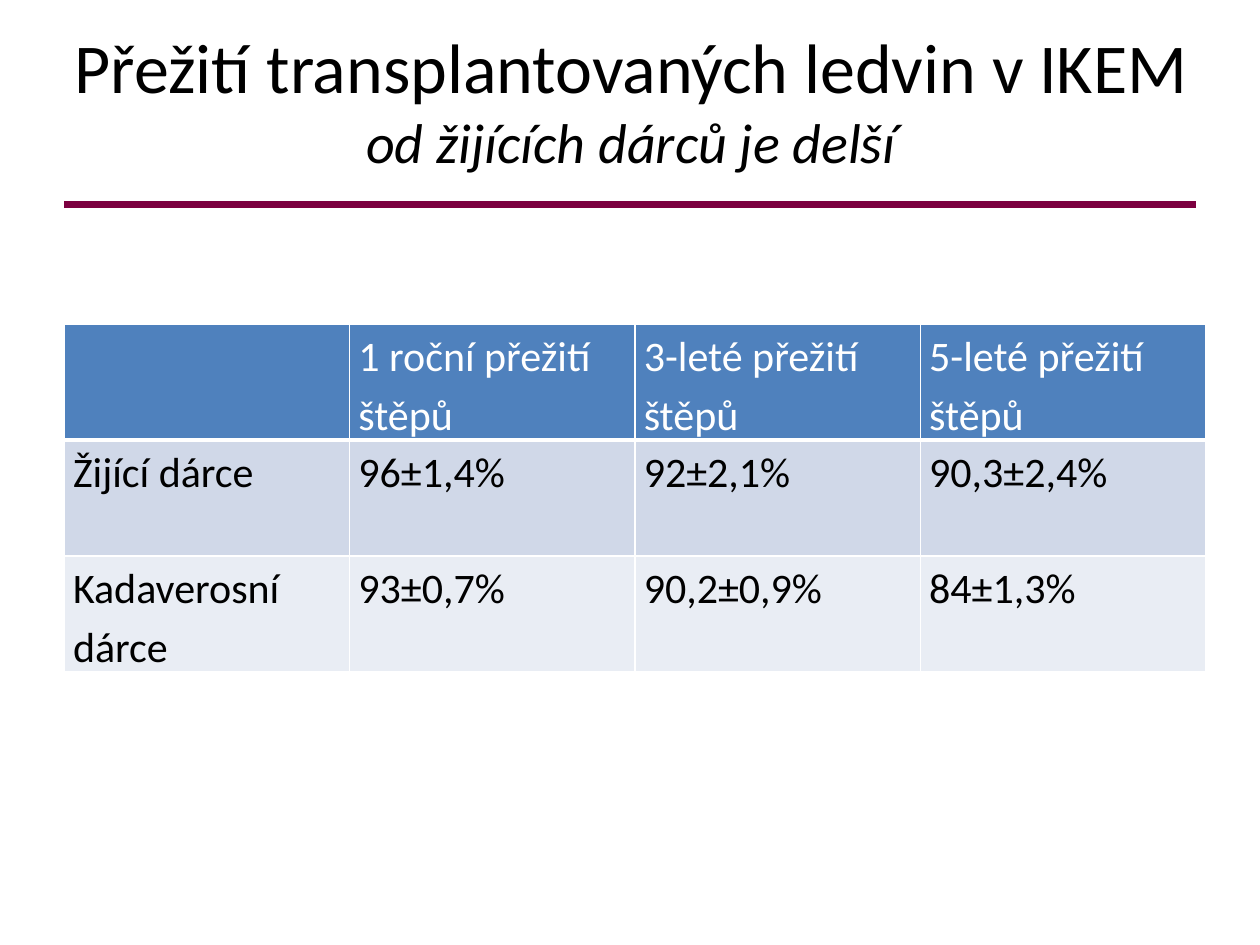
import pptx
import pptx.dml.color
import pptx.enum.shapes
import pptx.enum.text
import pptx.oxml
import pptx.oxml.ns
import pptx.util
from lxml import etree

WIDE, HIGH = 10, 7.5
FONT = "Calibri"
ROWS = [
    ["", "1 roční přežití štěpů", "3-leté přežití štěpů", "5-leté přežití štěpů"],
    ["Žijící dárce", "96±1,4%", "92±2,1%", "90,3±2,4%"],
    ["Kadaverosní dárce", "93±0,7%", "90,2±0,9%", "84±1,3%"],
]
FILLS = ["4F81BD", "D0D8E8", "E9EDF4"]


def paint(text):
    return pptx.dml.color.RGBColor.from_string(text)


def inch(*sizes):
    return [pptx.util.Inches(size) for size in sizes]


def add_title(slide, box):
    frame = slide.shapes.add_textbox(*inch(*box)).text_frame
    frame.word_wrap = True
    frame.vertical_anchor = pptx.enum.text.MSO_ANCHOR.MIDDLE
    para = frame.paragraphs[0]
    para.alignment = pptx.enum.text.PP_ALIGN.CENTER
    para.font.name = FONT
    para.font.color.rgb = paint("000000")
    # Main line, then the smaller italic line
    main = para.add_run()
    main.text = "Přežití transplantovaných ledvin v IKEM"
    main.font.size = pptx.util.Pt(40)
    para.add_line_break()
    sub = para.add_run()
    sub.text = "od žijících dárců je delší"
    sub.font.size = pptx.util.Pt(32)
    sub.font.italic = True


def add_rule(slide, left, top, width):
    kind = pptx.enum.shapes.MSO_CONNECTOR.STRAIGHT
    rule = slide.shapes.add_connector(kind, *inch(left, top, left + width, top))
    rule.line.color.rgb = paint("7C0040")
    rule.line.width = pptx.util.Pt(4)
    etree.SubElement(rule._element.spPr, pptx.oxml.ns.qn("a:effectLst"))


def add_edges(cell, base):
    props = cell._tc.get_or_add_tcPr()
    for side, points in zip("LRTB", (1, 1, 1, base)):
        props.append(pptx.oxml.parse_xml(
            f'<a:ln{side} {pptx.oxml.ns.nsdecls("a")} w="{pptx.util.Pt(points)}">'
            f'<a:solidFill><a:srgbClr val="FFFFFF"/></a:solidFill></a:ln{side}>'))


def add_grid(slide, box):
    table = slide.shapes.add_table(len(ROWS), len(ROWS[0]), *inch(*box)).table
    for r, (row, fill) in enumerate(zip(ROWS, FILLS)):
        for c, text in enumerate(row):
            cell = table.cell(r, c)
            add_edges(cell, 1 if r else 3)
            cell.fill.solid()
            cell.fill.fore_color.rgb = paint(fill)
            cell.margin_left = cell.margin_right = pptx.util.Inches(0.07)
            cell.margin_top = cell.margin_bottom = 0
            para = cell.text_frame.paragraphs[0]
            para.text = text
            para.line_spacing = 1.15
            para.font.name = FONT
            para.font.size = pptx.util.Pt(24)
            para.font.bold = False
            para.font.color.rgb = paint("000000" if r else "FFFFFF")


def main():
    deck = pptx.Presentation()
    deck.slide_width, deck.slide_height = inch(WIDE, HIGH)
    slide = deck.slides.add_slide(deck.slide_layouts[6])
    edge = 0.051 * WIDE
    add_rule(slide, edge, 0.216 * HIGH, WIDE - 2 * edge)
    add_title(slide, (0.016 * WIDE, 0.033 * HIGH, 0.97 * WIDE, 0.144 * HIGH))
    add_grid(slide, (edge, 0.343 * HIGH, 0.906 * WIDE, 0.368 * HIGH))
    deck.save("out.pptx")


if __name__ == "__main__":
    main()
